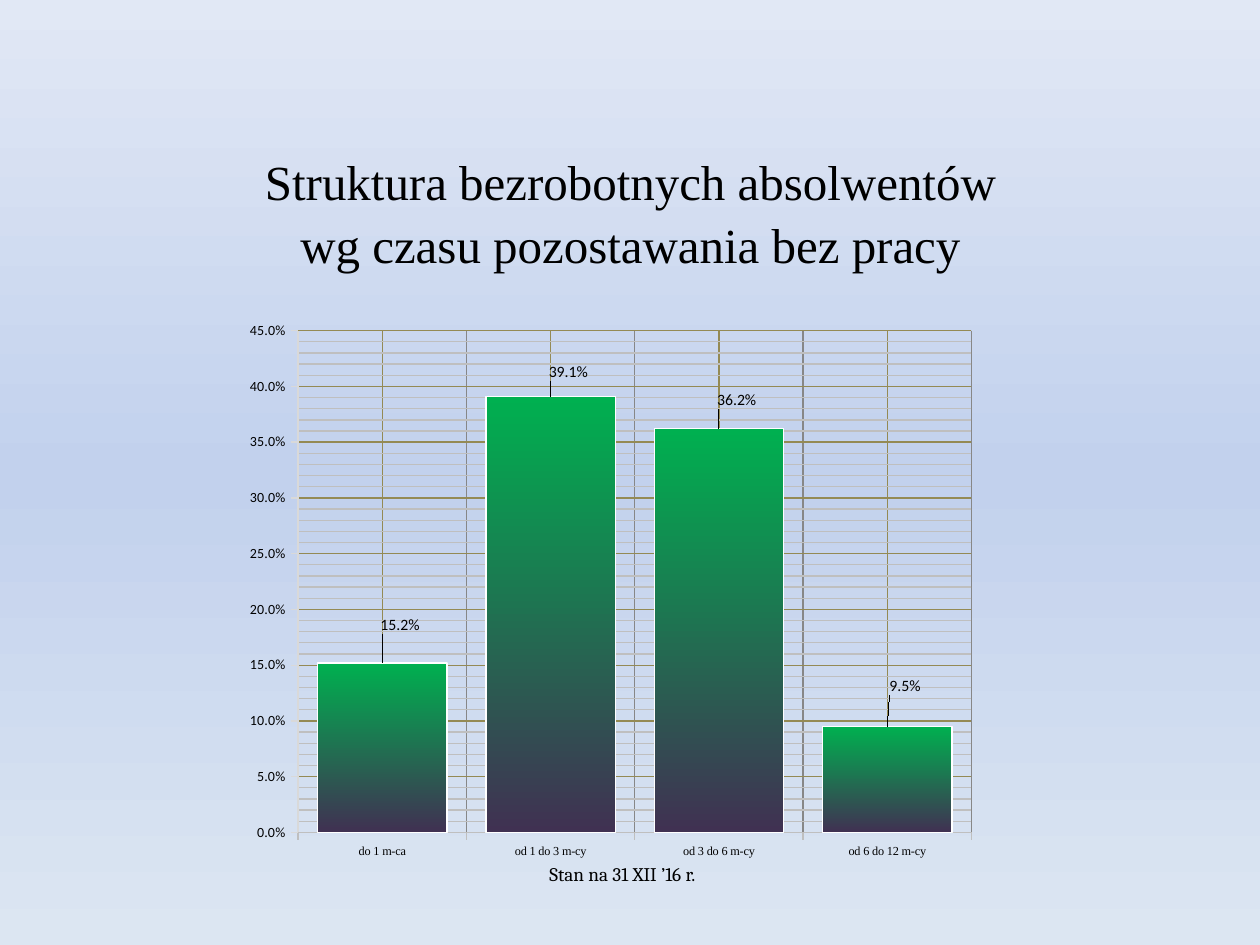
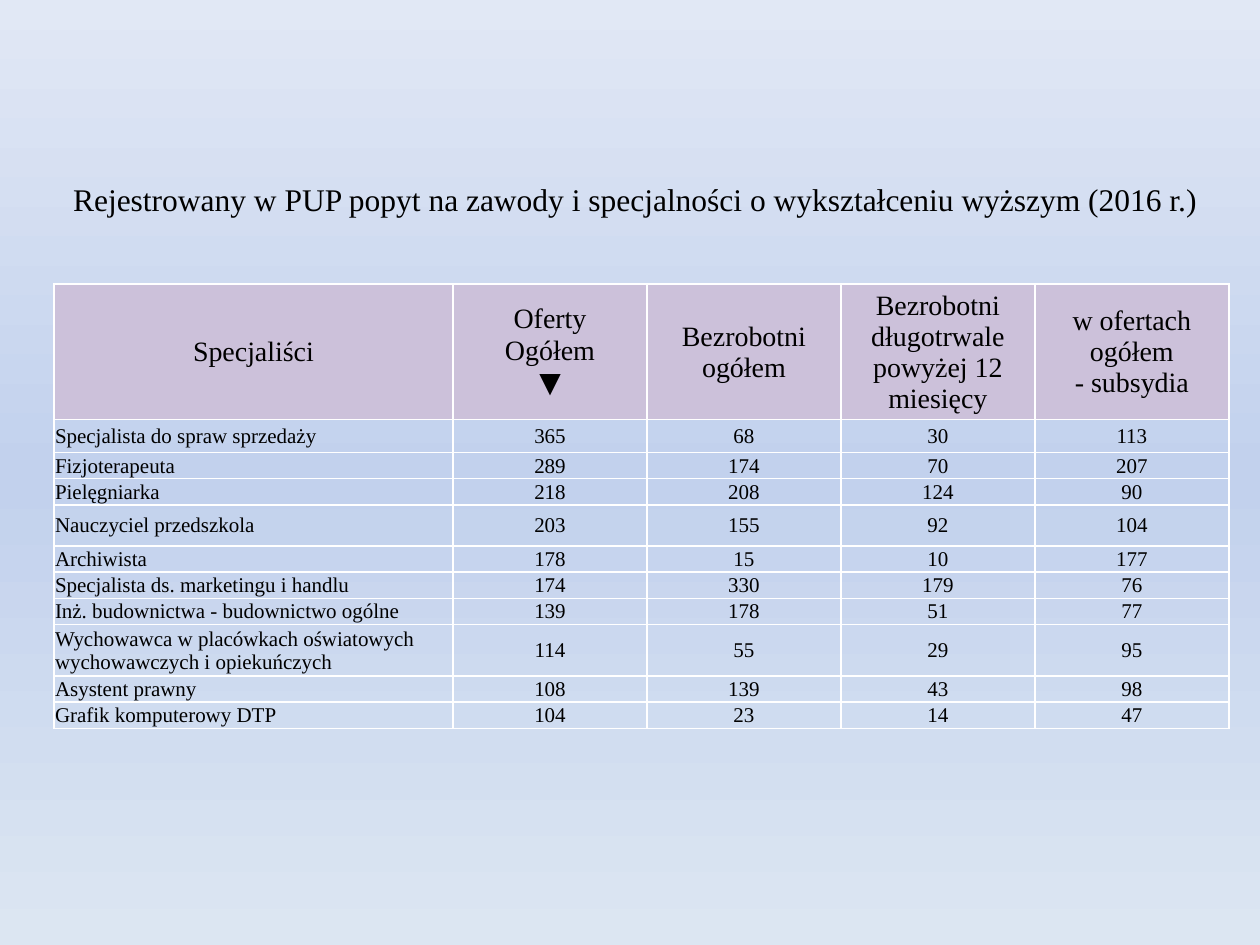
import dataclasses
import lxml.etree
import pptx
import pptx.chart.data
import pptx.dml.color
import pptx.enum.chart
import pptx.enum.text
import pptx.oxml
import pptx.oxml.ns
import pptx.util

qn = pptx.oxml.ns.qn
NS = pptx.oxml.ns.nsdecls("a", "c")
CENTER = pptx.enum.text.PP_ALIGN.CENTER
MIDDLE = pptx.enum.text.MSO_ANCHOR.MIDDLE


@dataclasses.dataclass(frozen=True)
class Theme:
    """Colours, fonts and type sizes shared by the slides."""
    text: str = "000000"
    white: str = "FFFFFF"
    header: str = "CCC1DA"
    major_grid: str = "948A54"
    category_grid: str = "878787"
    minor_grid: str = "BFBFBF"
    axis: str = "D9D9D9"
    background: tuple = ((0, "DCE6F2"), (50, "C2D1ED"), (100, "E1E8F5"))
    bar: tuple = ((0, "00B050"), (100, "403152"))
    serif: str = "Times New Roman"
    sans: str = "Calibri"
    caption: str = "Cambria"
    title_size: int = 28
    subtitle_size: int = 18
    header_size: int = 16
    body_size: int = 12
    caption_size: int = 11
    chart_size: int = 10
    label_size: int = 9
    value_size: int = 8
    category_size: int = 7


T = Theme()

WAITING_TIMES = {"do 1 m-ca": 0.152, "od 1 do 3 m-cy": 0.391,
                 "od 3 do 6 m-cy": 0.362, "od 6 do 12 m-cy": 0.095}
LABEL_RISES = (23, 10, 14, 26)

HEADERS = (("Specjaliści",), ("Oferty", "Ogółem", "▼"), ("Bezrobotni", "ogółem"),
           ("Bezrobotni", "długotrwale", "powyżej 12", "miesięcy"),
           ("w ofertach ogółem", "- subsydia"))
PROFESSIONS = (
    ("Specjalista do spraw sprzedaży", 365, 68, 30, 113),
    ("Fizjoterapeuta", 289, 174, 70, 207),
    ("Pielęgniarka", 218, 208, 124, 90),
    ("Nauczyciel przedszkola", 203, 155, 92, 104),
    ("Archiwista", 178, 15, 10, 177),
    ("Specjalista ds. marketingu i handlu", 174, 330, 179, 76),
    ("Inż. budownictwa - budownictwo ogólne", 139, 178, 51, 77),
    ("Wychowawca w placówkach oświatowych wychowawczych i opiekuńczych", 114, 55, 29, 95),
    ("Asystent prawny", 108, 139, 43, 98),
    ("Grafik komputerowy DTP", 104, 23, 14, 47),
)
COLUMN_WIDTHS = (399, 194, 194, 194, 194)
ROW_HEIGHTS = (125, 33, 24, 24, 41, 24, 24, 24, 48, 24, 24)


def px(n):
    """Turn px into EMU."""
    return round(n * 914400 / 126)


def rgb(color):
    """Return an RGB colour from its hex digits."""
    return pptx.dml.color.RGBColor.from_string(color)


def set_font(font, name, size, bold=False):
    """Set the face, size and text colour of a font."""
    font.name, font.size, font.bold = name, pptx.util.Pt(size), bold
    font.color.rgb = rgb(T.text)


def set_line(line, color):
    """Give a line its colour and the common chart width."""
    line.color.rgb = rgb(color)
    line.width = pptx.util.Pt(0.75)


def set_gradient(fill, element, stops, angle):
    """Fill with the given gradient stops."""
    fill.gradient()
    fill.gradient_angle = angle
    gs_lst = next(element.iter(qn("a:gsLst")))
    for gs in list(gs_lst):
        gs_lst.remove(gs)
    for position, color in stops:
        gs = lxml.etree.SubElement(gs_lst, qn("a:gs"), pos=str(position * 1000))
        lxml.etree.SubElement(gs, qn("a:srgbClr"), val=color)


def add_slide(prs):
    """Add a blank slide with the shared background."""
    slide = prs.slides.add_slide(prs.slide_layouts[6])
    set_gradient(slide.background.fill, slide.element, T.background, 90)
    return slide


def add_text(slide, box, lines, font, size, spacing=1.0):
    """Add centred lines of text in a box."""
    tf = slide.shapes.add_textbox(*map(px, box)).text_frame
    tf.word_wrap = True
    tf.vertical_anchor = MIDDLE
    tf.text = "\n".join(lines)
    for p in tf.paragraphs:
        p.alignment = CENTER
        p.line_spacing = spacing
        set_font(p.font, font, size)


def manual_layout(**parts):
    """Return a chart layout element with the given parts."""
    layout = pptx.oxml.parse_xml(f"<c:layout {NS}><c:manualLayout/></c:layout>")
    for tag, value in parts.items():
        lxml.etree.SubElement(layout[0], qn(f"c:{tag}"), val=str(value))
    return layout


def style_axis(axis, font, size, colors):
    """Style an axis: its font, line, major grid and minor grid."""
    line, major, minor = colors
    set_font(axis.tick_labels.font, font, size)
    set_line(axis.format.line, line)
    axis.has_major_gridlines = axis.has_minor_gridlines = True
    set_line(axis.major_gridlines.format.line, major)
    axis._element.find(qn("c:minorGridlines")).append(pptx.oxml.parse_xml(
        f'<c:spPr {NS}><a:ln w="9525"><a:solidFill><a:srgbClr val="{minor}"/>'
        "</a:solidFill></a:ln></c:spPr>"))
    axis.major_tick_mark = pptx.enum.chart.XL_TICK_MARK.OUTSIDE
    axis.minor_tick_mark = pptx.enum.chart.XL_TICK_MARK.NONE


def style_labels(series, box):
    """Place white value labels to the upper right of each bar's top centre."""
    for i in range(len(LABEL_RISES)):
        label = series.points[i].data_label
        set_font(label.font, T.sans, T.label_size)
        label.position = pptx.enum.chart.XL_LABEL_POSITION.OUTSIDE_END
    for d_lbl, rise in zip(series.data_labels._element.iter(qn("c:dLbl")), LABEL_RISES):
        d_lbl.insert(1, manual_layout(x=round(18 / box[2], 3), y=round(-rise / box[3], 3)))
        d_lbl.insert(2, pptx.oxml.parse_xml(
            f'<c:numFmt {NS} formatCode="0.0%" sourceLinked="0"/>'))
        d_lbl.insert(3, pptx.oxml.parse_xml(
            f'<c:spPr {NS}><a:solidFill><a:srgbClr val="{T.white}"/></a:solidFill></c:spPr>'))


def add_waiting_chart(slide, box):
    """Add the column chart of time spent without work."""
    data = pptx.chart.data.CategoryChartData(number_format="0.0%")
    data.categories = list(WAITING_TIMES)
    data.add_series("Series 1", list(WAITING_TIMES.values()))
    kind = pptx.enum.chart.XL_CHART_TYPE.COLUMN_CLUSTERED
    chart = slide.shapes.add_chart(kind, *map(px, box), data).chart
    chart.has_legend = chart.has_title = False
    set_font(chart.font, T.sans, T.chart_size)

    style_axis(chart.category_axis, T.serif, T.category_size,
               (T.minor_grid, T.category_grid, T.major_grid))
    axis = chart.value_axis
    style_axis(axis, T.sans, T.value_size, (T.axis, T.major_grid, T.minor_grid))
    axis.minimum_scale, axis.maximum_scale = 0, 0.45
    axis.major_unit, axis.minor_unit = 0.05, 0.01
    axis.tick_labels.number_format = "0.0%"
    axis.tick_labels.number_format_is_linked = False

    plot = chart.plots[0]
    plot.gap_width = 30
    plot.vary_by_categories = False
    series = plot.series[0]
    set_gradient(series.format.fill, series._element, T.bar, 270)
    set_line(series.format.line, T.white)
    style_labels(series, box)

    area = next(chart.element.iter(qn("c:plotArea")))
    for old in area.findall(qn("c:layout")):
        area.remove(old)
    area.insert(0, manual_layout(layoutTarget="inner", xMode="edge", yMode="edge",
                                 x=0.11, y=0.06, w=0.87, h=0.82))


def fill_cell(cell, lines, size, centred):
    """Write a table cell with white borders and tight margins."""
    cell.margin_left = cell.margin_right = cell.margin_top = px(1)
    cell.margin_bottom = 0
    cell.vertical_anchor = MIDDLE
    cell.text = "\n".join(lines)
    for p in cell.text_frame.paragraphs:
        symbol = p.text == "▼"
        set_font(p.font, T.sans if symbol else T.serif, size, symbol)
        if centred:
            p.alignment = CENTER
    tc_pr = cell._tc.get_or_add_tcPr()
    for side in "LRTB":
        tc_pr.append(pptx.oxml.parse_xml(
            f'<a:ln{side} {NS} w="12700"><a:solidFill><a:srgbClr val="{T.white}"/>'
            f"</a:solidFill></a:ln{side}>"))


def add_demand_table(slide, left, top):
    """Add the table of demand for professions."""
    table = slide.shapes.add_table(
        len(ROW_HEIGHTS), len(COLUMN_WIDTHS), px(left), px(top),
        px(sum(COLUMN_WIDTHS)), px(sum(ROW_HEIGHTS))).table
    table.first_row = table.horz_banding = False
    for column, width in zip(table.columns, COLUMN_WIDTHS):
        column.width = px(width)
    for row, height in zip(table.rows, ROW_HEIGHTS):
        row.height = px(height)
    for c, lines in enumerate(HEADERS):
        cell = table.cell(0, c)
        fill_cell(cell, lines, T.header_size, True)
        cell.fill.solid()
        cell.fill.fore_color.rgb = rgb(T.header)
    for r, values in enumerate(PROFESSIONS, 1):
        for c, value in enumerate(values):
            cell = table.cell(r, c)
            fill_cell(cell, (str(value),), T.body_size, c > 0)
            cell.fill.background()


def build_structure_slide(prs):
    """Build the slide on graduates by time without work."""
    slide = add_slide(prs)
    add_waiting_chart(slide, (213, 294, 774, 612))
    add_text(slide, (25, 155, 1211, 110),
             ("Struktura bezrobotnych absolwentów", "wg czasu pozostawania bez pracy"),
             T.serif, T.title_size, 1.07)
    add_text(slide, (54, 853, 1137, 42), ("Stan na 31 XII ’16 r.",), T.caption, T.caption_size)


def build_demand_slide(prs):
    """Build the slide on registered demand for professions."""
    slide = add_slide(prs)
    add_text(slide, (25, 155, 1221, 88),
             ("Rejestrowany w PUP popyt na zawody i specjalności o wykształceniu wyższym (2016 r.)",),
             T.serif, T.subtitle_size)
    add_demand_table(slide, 54, 284)


def main():
    """Build and save the presentation."""
    prs = pptx.Presentation()
    prs.slide_width, prs.slide_height = px(1260), px(945)
    build_structure_slide(prs)
    build_demand_slide(prs)
    prs.save("out.pptx")


if __name__ == "__main__":
    main()
